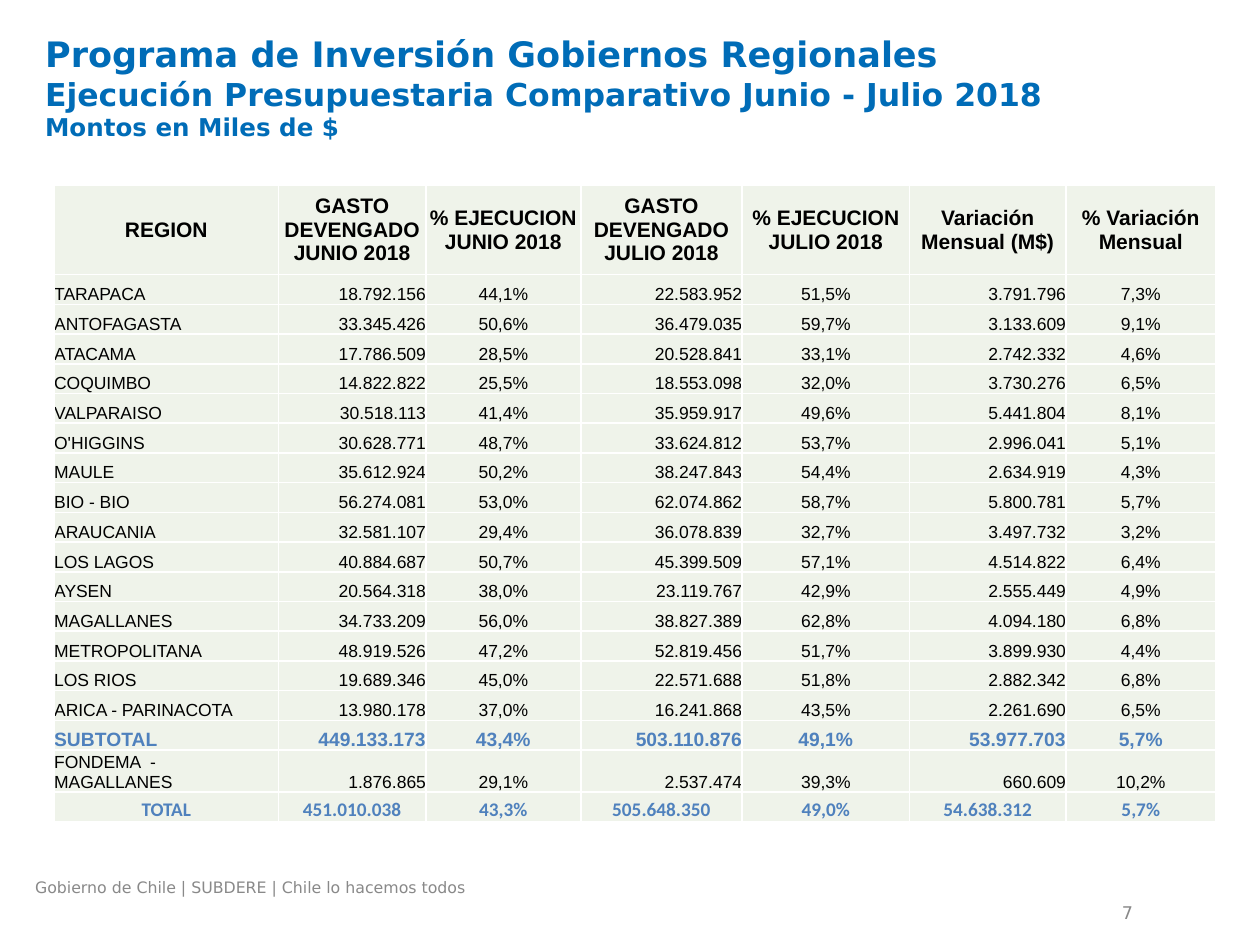
from lxml import etree
from pptx import Presentation
from pptx.dml.color import RGBColor
from pptx.enum.text import MSO_ANCHOR, PP_ALIGN
from pptx.oxml.ns import qn
from pptx.util import Inches, Pt

LEFT, MID, RIGHT = PP_ALIGN.LEFT, PP_ALIGN.CENTER, PP_ALIGN.RIGHT
TOP, CENTER, BOTTOM = MSO_ANCHOR.TOP, MSO_ANCHOR.MIDDLE, MSO_ANCHOR.BOTTOM

COLORS = {"title": "006CB7", "text": "000000", "sum": "4F81BD",
          "cell": "EFF3EA", "edge": "FFFFFF", "foot": "898989"}
SANS = "DejaVu Sans"

TITLE = [("Programa de Inversión Gobiernos Regionales", 20),
         ("Ejecución Presupuestaria Comparativo Junio - Julio 2018", 18),
         ("Montos en Miles de $", 14)]
FOOTER = "Gobierno de Chile | SUBDERE | Chile lo hacemos todos"
PAGE = "7"

HEAD = ("REGION", "GASTO DEVENGADO JUNIO 2018", "% EJECUCION JUNIO 2018",
        "GASTO DEVENGADO JULIO 2018", "% EJECUCION JULIO 2018",
        "Variación Mensual (M$)", "% Variación Mensual")
REGIONS = [
    ("TARAPACA", "18.792.156", "44,1%", "22.583.952", "51,5%", "3.791.796", "7,3%"),
    ("ANTOFAGASTA", "33.345.426", "50,6%", "36.479.035", "59,7%", "3.133.609", "9,1%"),
    ("ATACAMA", "17.786.509", "28,5%", "20.528.841", "33,1%", "2.742.332", "4,6%"),
    ("COQUIMBO", "14.822.822", "25,5%", "18.553.098", "32,0%", "3.730.276", "6,5%"),
    ("VALPARAISO", "30.518.113", "41,4%", "35.959.917", "49,6%", "5.441.804", "8,1%"),
    ("O'HIGGINS", "30.628.771", "48,7%", "33.624.812", "53,7%", "2.996.041", "5,1%"),
    ("MAULE", "35.612.924", "50,2%", "38.247.843", "54,4%", "2.634.919", "4,3%"),
    ("BIO - BIO", "56.274.081", "53,0%", "62.074.862", "58,7%", "5.800.781", "5,7%"),
    ("ARAUCANIA", "32.581.107", "29,4%", "36.078.839", "32,7%", "3.497.732", "3,2%"),
    ("LOS LAGOS", "40.884.687", "50,7%", "45.399.509", "57,1%", "4.514.822", "6,4%"),
    ("AYSEN", "20.564.318", "38,0%", "23.119.767", "42,9%", "2.555.449", "4,9%"),
    ("MAGALLANES", "34.733.209", "56,0%", "38.827.389", "62,8%", "4.094.180", "6,8%"),
    ("METROPOLITANA", "48.919.526", "47,2%", "52.819.456", "51,7%", "3.899.930", "4,4%"),
    ("LOS RIOS", "19.689.346", "45,0%", "22.571.688", "51,8%", "2.882.342", "6,8%"),
    ("ARICA - PARINACOTA", "13.980.178", "37,0%", "16.241.868", "43,5%", "2.261.690", "6,5%"),
]
SUBTOTAL = ("SUBTOTAL", "449.133.173", "43,4%", "503.110.876", "49,1%", "53.977.703", "5,7%")
FONDEMA = ("FONDEMA  - MAGALLANES", "1.876.865", "29,1%", "2.537.474", "39,3%", "660.609", "10,2%")
TOTAL = ("TOTAL", "451.010.038", "43,3%", "505.648.350", "49,0%", "54.638.312", "5,7%")

COLS = (1.78, 1.17, 1.23, 1.28, 1.33, 1.24, 1.19)
TABLE_X, TABLE_Y, TABLE_H, HEAD_H = 0.43, 1.47, 4.96, 0.71
MIXED = (LEFT, RIGHT, MID, RIGHT, MID, RIGHT, MID)
CENTERED = (MID,) * len(COLS)

# Row style: font, size, colour, bold, alignments, anchor
HEAD_STYLE = ("Arial", 12, "text", True, CENTERED, CENTER)
BODY_STYLE = ("Arial", 10, "text", False, MIXED, BOTTOM)
SUB_STYLE = ("Arial", 11, "sum", True, MIXED, BOTTOM)
TOTAL_STYLE = ("Calibri", 11, "sum", True, CENTERED, BOTTOM)
ROWS = [(HEAD, HEAD_STYLE), *((row, BODY_STYLE) for row in REGIONS),
        (SUBTOTAL, SUB_STYLE), (FONDEMA, BODY_STYLE), (TOTAL, TOTAL_STYLE)]


def set_font(para, name, color, bold=False, size=None):
    font = para.font
    font.name, font.bold = name, bold
    font.color.rgb = RGBColor.from_string(COLORS[color])
    if size:
        font.size = Pt(size)


def add_text(slide, box, lines, color, bold=False, align=LEFT, anchor=TOP):
    """Add one paragraph whose (text, size) lines are split by line breaks."""
    frame = slide.shapes.add_textbox(*map(Inches, box)).text_frame
    frame.word_wrap = True
    frame.vertical_anchor = anchor
    para = frame.paragraphs[0]
    para.alignment = align
    set_font(para, SANS, color, bold)
    for num, (text, size) in enumerate(lines):
        if num:
            para.add_line_break()
        run = para.add_run()
        run.text = text
        run.font.size = Pt(size)


def add_edges(cell):
    props = cell._tc.get_or_add_tcPr()
    for num, side in enumerate(("lnL", "lnR", "lnT", "lnB")):
        line = etree.Element(qn("a:" + side), w=str(Pt(1)))
        fill = etree.SubElement(line, qn("a:solidFill"))
        etree.SubElement(fill, qn("a:srgbClr"), val=COLORS["edge"])
        props.insert(num, line)


def fill_cell(cell, text, style, col):
    name, size, color, bold, aligns, anchor = style
    cell.margin_left = cell.margin_right = 0
    cell.margin_top = cell.margin_bottom = 0
    cell.vertical_anchor = anchor
    cell.text = text
    para = cell.text_frame.paragraphs[0]
    para.alignment = aligns[col]
    set_font(para, name, color, bold, size)
    cell.fill.solid()
    cell.fill.fore_color.rgb = RGBColor.from_string(COLORS["cell"])
    add_edges(cell)


def add_budget(slide):
    box = (TABLE_X, TABLE_Y, sum(COLS), TABLE_H)
    table = slide.shapes.add_table(len(ROWS), len(COLS), *map(Inches, box)).table
    table.first_row = table.horz_banding = False
    for col, width in zip(table.columns, COLS):
        col.width = Inches(width)
    row_h = (TABLE_H - HEAD_H) / (len(ROWS) - 1)
    for num, (values, style) in enumerate(ROWS):
        table.rows[num].height = Inches(row_h if num else HEAD_H)
        for col, text in enumerate(values):
            fill_cell(table.cell(num, col), text, style, col)


def main():
    prs = Presentation()
    prs.slide_width, prs.slide_height = Inches(10), Inches(7.5)
    slide = prs.slides.add_slide(prs.slide_layouts[6])
    add_text(slide, (0.26, 0.21, 8.97, 1.25), TITLE, "title", bold=True)
    add_budget(slide)
    add_text(slide, (0.18, 6.92, 6.48, 0.27), [(FOOTER, 9)], "foot")
    add_text(slide, (6.76, 7.14, 2.33, 0.21), [(PAGE, 10)], "foot",
             align=RIGHT, anchor=CENTER)
    prs.save("out.pptx")


if __name__ == "__main__":
    main()
